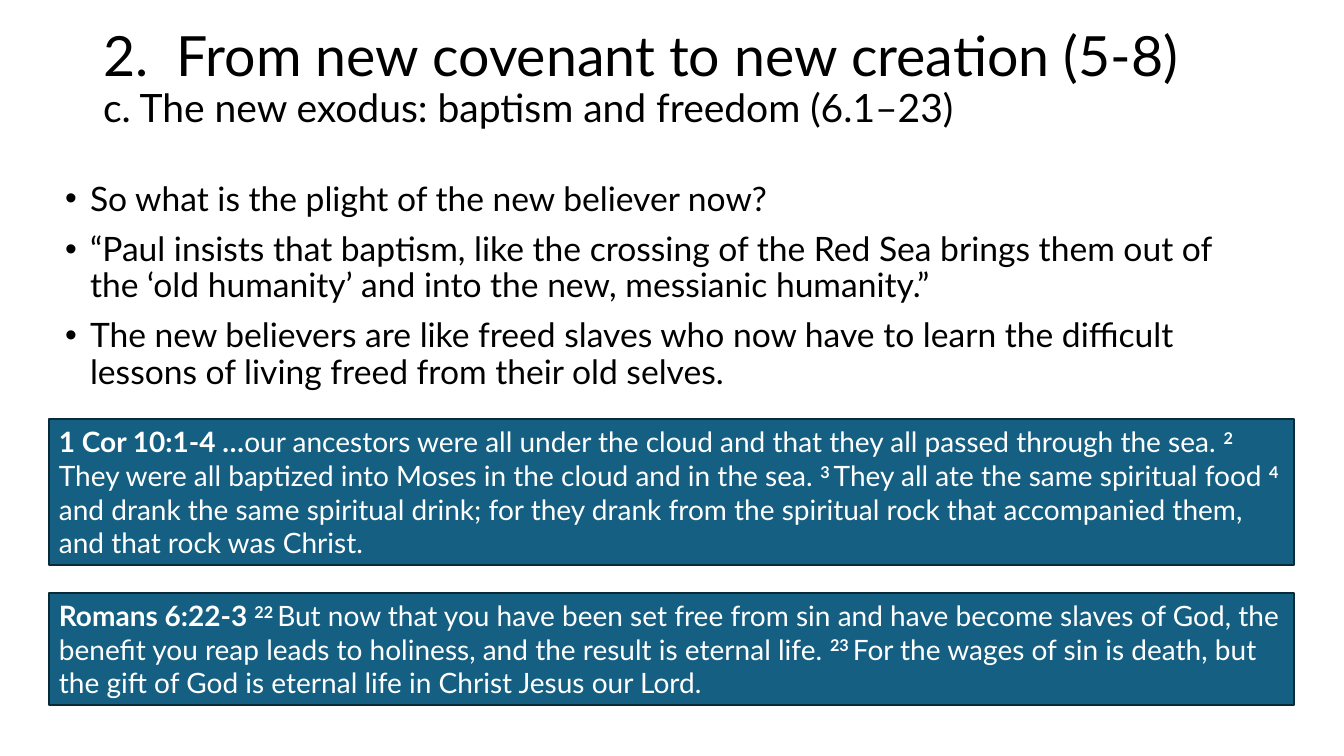
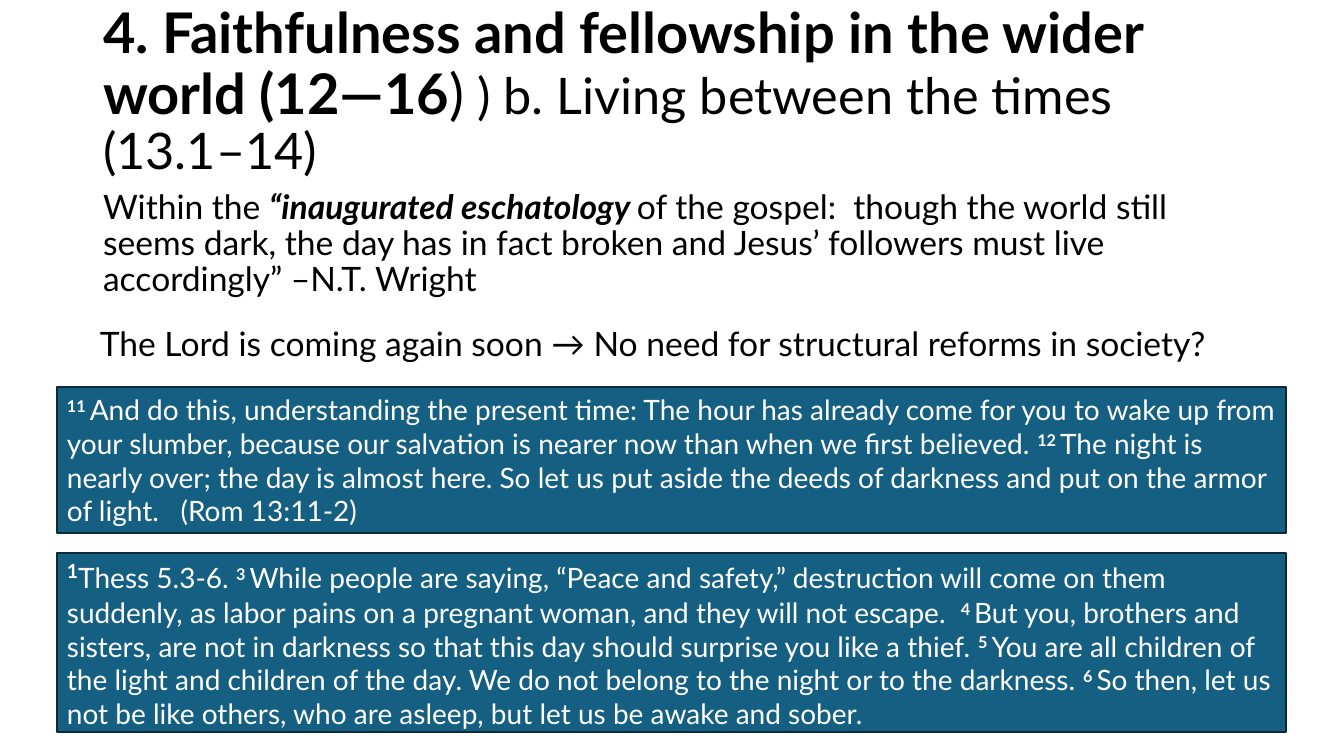
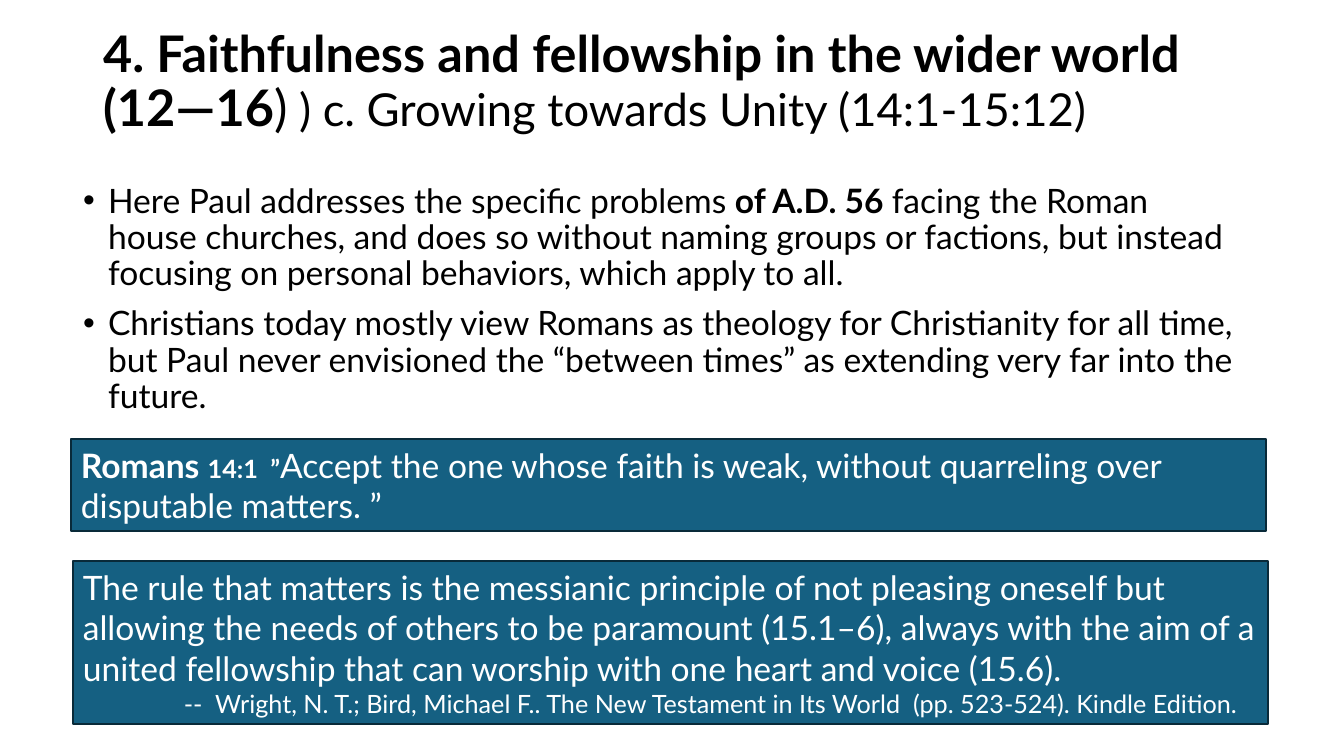
from lxml.etree import SubElement as Sub
from pptx import Presentation
from pptx.dml.color import RGBColor as RGB
from pptx.enum.shapes import MSO_SHAPE as Shape
from pptx.enum.text import MSO_ANCHOR as Anchor, MSO_AUTO_SIZE as Auto, PP_ALIGN as Align
from pptx.oxml.ns import qn
from pptx.util import Emu, Pt

SCALE = 12192000 / 1344
BOLD = dict(bold=True)
VERSE = dict(bold=True, up=True)


def px(num):
    return Emu(round(num * SCALE))


def color(code):
    return RGB.from_string(code)


class Deck:
    font, ink, pale, fill, edge = "Lato", "000000", "FFFFFF", "156082", "092A39"

    def __init__(self):
        self.prs = Presentation()
        self.prs.slide_width, self.prs.slide_height = px(1344), px(756)

    def page(self):
        self.slide = self.prs.slides.add_slide(self.prs.slide_layouts[1])

    def place(self, shape, box):
        for name, num in zip(("left", "top", "width", "height"), box):
            setattr(shape, name, px(num))

    def text(self, shape, paras, size, ink, anchor=Anchor.TOP, fit=Auto.NONE,
             bullet=False, indent=0, line=1.0, gap=0):
        frame = shape.text_frame
        for name, value in dict(word_wrap=True, auto_size=fit, vertical_anchor=anchor).items():
            setattr(frame, name, value)
        for pos, runs in enumerate(paras):
            para = frame.add_paragraph() if pos else frame.paragraphs[0]
            props = para._p.get_or_add_pPr()
            hang = px(25) if bullet else 0
            props.set("marL", str(hang or px(indent if pos else 0)))
            props.set("indent", str(-hang))
            if bullet:
                Sub(props, qn("a:buFont"), typeface="Arial")
                Sub(props, qn("a:buChar"), char="•")
            else:
                Sub(props, qn("a:buNone"))
            for name, value in dict(alignment=Align.LEFT, line_spacing=line,
                                    space_before=Pt(gap if pos else 0)).items():
                setattr(para, name, value)
            for item in runs:
                self.span(para, item, size, ink)

    def span(self, para, item, size, ink):
        words, style = (item, {}) if isinstance(item, str) else item
        style = dict(size=size, bold=False, italic=False) | style
        run = para.add_run()
        run.text = words
        if style.pop("up", False):
            run._r.get_or_add_rPr().set("baseline", "30000")
        style.update(name=self.font, size=Pt(style["size"]))
        for name, value in style.items():
            setattr(run.font, name, value)
        run.font.color.rgb = color(ink)

    def title(self, top, size, *paras):
        shape = self.slide.shapes.title
        self.place(shape, (93, top, 1159, 146))
        self.text(shape, paras, size, self.ink, Anchor.MIDDLE, line=0.9)

    def body(self, box, *paras, bullet=True):
        shape = self.slide.placeholders[1]
        self.place(shape, box)
        self.text(shape, paras, 24, self.ink, bullet=bullet, line=0.9, gap=10)

    def note(self, box, *paras):
        shape = self.slide.shapes.add_textbox(*map(px, box))
        self.text(shape, paras, 24, self.ink, fit=Auto.SHAPE_TO_FIT_TEXT)

    def quote(self, box, *paras, size=20, indent=0):
        shape = self.slide.shapes.add_shape(Shape.RECTANGLE, *map(px, box))
        shape.shadow.inherit = False
        shape.fill.solid()
        shape.fill.fore_color.rgb = color(self.fill)
        shape.line.color.rgb = color(self.edge)
        shape.line.width = Pt(1.5)
        self.text(shape, paras, size, self.pale, Anchor.MIDDLE,
                  Auto.SHAPE_TO_FIT_TEXT, indent=indent)


def exodus(deck):
    deck.page()
    deck.title(7, 39.6, ["2.  From new covenant to new creation (5-8)"],
               [("c. The new exodus: baptism and freedom (6.1–23)", dict(size=27.9))])
    deck.body((55, 177, 1196, 247),
              ["So what is the plight of the new believer now?"],
              ["“Paul insists that baptism, like the crossing of the Red Sea brings them out of "
               "the ‘old humanity’ and into the new, messianic humanity.”"],
              ["The new believers are like freed slaves who now have to learn the difficult "
               "lessons of living freed from their old selves."])
    deck.quote((49, 419, 1245, 146), [
        ("1 Cor 10:1-4 …", BOLD),
        "our ancestors were all under the cloud and that they all passed through the sea. ",
        ("2 ", VERSE), "They were all baptized into Moses in the cloud and in the sea. ",
        ("3 ", VERSE), "They all ate the same spiritual food ",
        ("4 ", VERSE), "and drank the same spiritual drink; for they drank from the "
        "spiritual rock that accompanied them, and that rock was Christ."])
    deck.quote((49, 593, 1245, 112), [
        ("Romans 6:22-3 ", BOLD), ("22 ", VERSE),
        "But now that you have been set free from sin and have become slaves of God, the "
        "benefit you reap leads to holiness, and the result is eternal life. ",
        ("23 ", VERSE), "For the wages of sin is death, but the gift of God is eternal "
        "life in Christ Jesus our Lord."])


def wider(deck, top, size, small, part):
    deck.page()
    deck.title(top, size, [
        ("4. Faithfulness and fellowship in the wider world (12—16", BOLD), ")",
        (" ) " + part, dict(size=small))])


def times(deck):
    wider(deck, 20, 40, 36, "b. Living between the times (13.1–14)")
    deck.body((93, 185, 1159, 292), [
        "Within the ", ("“inaugurated eschatology ", dict(bold=True, italic=True)),
        "of the gospel:  though the world still seems dark, the day has in fact broken and "
        "Jesus’ followers must live accordingly” –N.T. Wright"], bullet=False)
    deck.quote((57, 553, 1229, 179), [
        ("1", VERSE | dict(size=24)), "Thess 5.3-6. ",
        ("3 ", VERSE), "While people are saying, “Peace and safety,” destruction will come "
        "on them suddenly, as labor pains on a pregnant woman, and they will not escape.  ",
        ("4 ", VERSE), "But you, brothers and sisters, are not in darkness so that this day "
        "should surprise you like a thief. ",
        ("5 ", VERSE), "You are all children of the light and children of the day. We do not "
        "belong to the night or to the darkness. ",
        ("6 ", VERSE), "So then, let us not be like others, who are asleep, but let us be "
        "awake and sober."])
    deck.quote((57, 387, 1229, 146), [
        ("11 ", VERSE), "And do this, understanding the present time: The hour has already "
        "come for you to wake up from your slumber, because our salvation is nearer now than "
        "when we first believed. ",
        ("12 ", VERSE), "The night is nearly over; the day is almost here. So let us put "
        "aside the deeds of darkness and put on the armor of light.   (Rom 13:11-2)"])
    deck.note((90, 318, 1175, 50), [
        "The Lord is coming again soon → No need for structural reforms in society?"])


def unity(deck):
    wider(deck, 10, 36, 32.4, "c. Growing towards Unity (14:1-15:12)")
    deck.body((73, 179, 1179, 270),
              ["Here Paul addresses the specific problems ", ("of A.D. 56 ", BOLD),
               "facing the Roman house churches, and does so without naming groups or "
               "factions, but instead focusing on personal behaviors, which apply to all."],
              ["Christians today mostly view Romans as theology for Christianity for all "
               "time, but Paul never envisioned the “between times” as extending very far "
               "into the future."])
    deck.quote((73, 561, 1195, 163),
               ["The rule that matters is the messianic principle of not pleasing oneself "
                "but allowing the needs of others to be paramount (15.1–6), always with the "
                "aim of a united fellowship that can worship with one heart and voice (15.6)."],
               [("--  Wright, N. T.; Bird, Michael F.. The New Testament in Its World  "
                 "(pp. 523-524). Kindle Edition.", dict(size=18))],
               size=24, indent=101)
    deck.quote((71, 439, 1195, 92), [
        ("Romans ", BOLD), ("14:1  ”", BOLD | dict(size=18)),
        "Accept the one whose faith is weak, without quarreling over disputable matters. ”"],
        size=24)


def main():
    deck = Deck()
    for build in (exodus, times, unity):
        build(deck)
    deck.prs.save("out.pptx")


if __name__ == "__main__":
    main()
